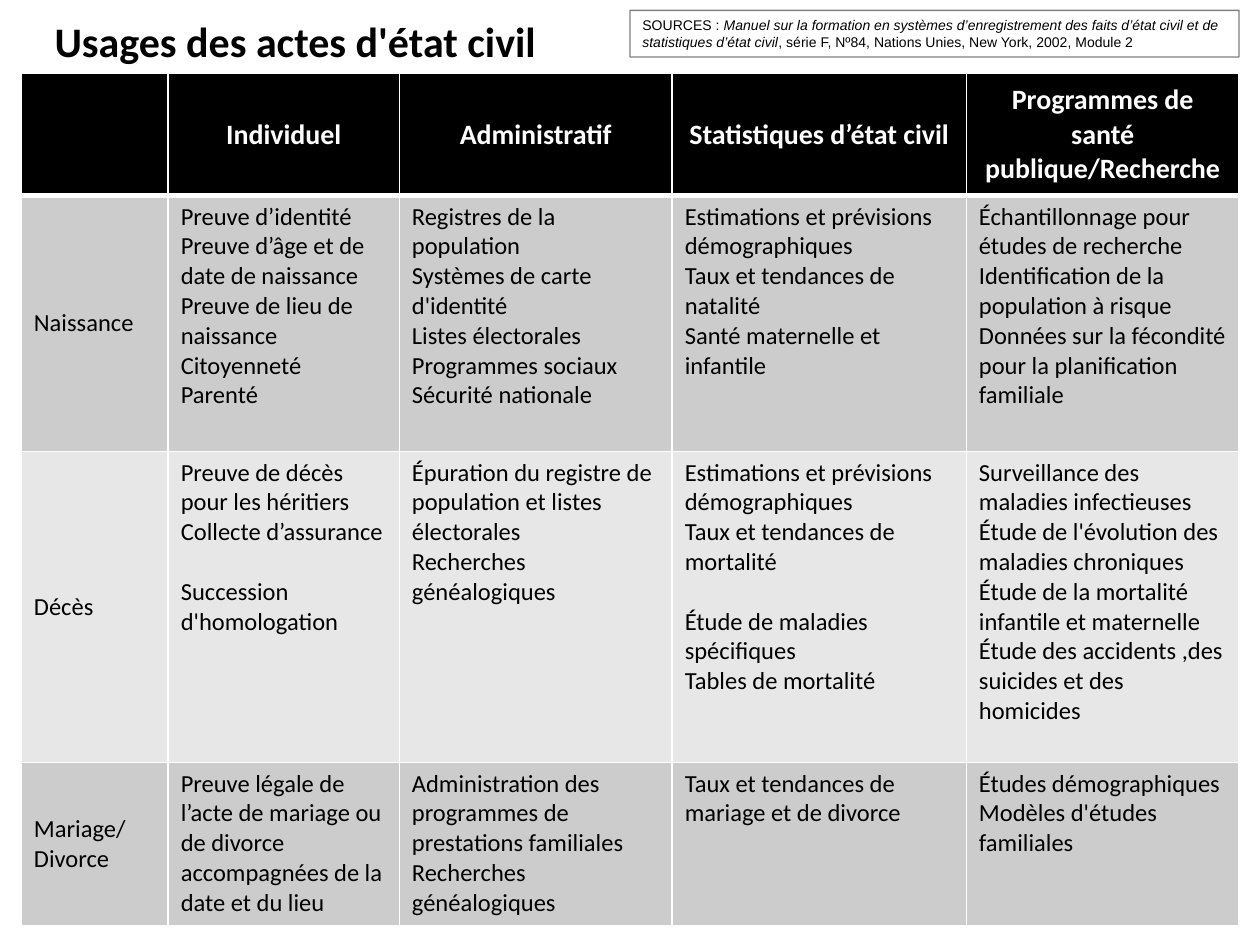
from lxml.etree import SubElement
from pptx import Presentation
from pptx.dml.color import RGBColor
from pptx.enum.shapes import MSO_SHAPE as Shape
from pptx.enum.text import MSO_ANCHOR as Anchor, MSO_AUTO_SIZE as AutoSize, PP_ALIGN as Align
from pptx.oxml.ns import qn
from pptx.util import Cm, Pt

COLORS = {"black": "000000", "white": "FFFFFF", "dark_band": "CCCCCC", "light_band": "E7E7E7"}

TITLE = "Usages des actes d'état civil"
SOURCES = [  # text, italic
    ("SOURCES\u00a0: ", False),
    ("Manuel sur la formation en systèmes d’enregistrement des faits d’état civil "
     "et de statistiques d’état civil", True),
    (", série F, Nº84, Nations Unies, New York, 2002, Module 2", False),
]
HEADERS = ["", "Individuel", "Administratif", "Statistiques d’état civil",
           "Programmes de santé publique/Recherche"]
EVENTS = [
    ("Naissance", [
        ["Preuve d’identité", "Preuve d’âge et de date de naissance",
         "Preuve de lieu de naissance", "Citoyenneté", "Parenté"],
        ["Registres de la population", "Systèmes de carte d'identité",
         "Listes électorales", "Programmes sociaux", "Sécurité nationale"],
        ["Estimations et prévisions démographiques", "Taux et tendances de natalité",
         "Santé maternelle et infantile"],
        ["Échantillonnage pour études de recherche",
         "Identification de la population à risque",
         "Données sur la fécondité pour la planification familiale"],
    ]),
    ("Décès", [
        ["Preuve de décès pour les héritiers", "Collecte d’assurance",
         "Succession d'homologation"],
        ["Épuration du registre de population et listes électorales",
         "Recherches généalogiques"],
        ["Estimations et prévisions démographiques", "Taux et tendances de mortalité",
         "Étude de maladies spécifiques", "Tables de mortalité"],
        ["Surveillance des maladies infectieuses",
         "Étude de l'évolution des maladies chroniques",
         "Étude de la mortalité infantile et maternelle",
         "Étude des accidents ,des suicides et des homicides"],
    ]),
    ("Mariage/Divorce", [
        ["Preuve légale de l’acte de mariage ou de divorce accompagnées de la date et du lieu"],
        ["Administration des programmes de prestations familiales",
         "Recherches généalogiques"],
        ["Taux et tendances de mariage et de divorce"],
        ["Études démographiques", "Modèles d'études familiales"],
    ]),
]
SPACED = {"Succession d'homologation", "Étude de maladies spécifiques"}  # one line of space before
COLUMN_WIDTHS = [2.96, 4.66, 5.5, 5.93, 5.5]
ROW_HEIGHTS = [2.46, 5.16, 6.27, 3.3]


def color(name):
    return RGBColor.from_string(COLORS[name])


def add_run(paragraph, text, size, font="Calibri", ink="black", bold=False, italic=False):
    run = paragraph.add_run()
    run.text = text
    run.font.name, run.font.size = font, Pt(size)
    run.font.bold, run.font.italic = bold, italic
    run.font.color.rgb = color(ink)


def set_borders(cell, top, bottom):
    properties = cell._tc.get_or_add_tcPr()
    for tag, width in (("a:lnL", 1), ("a:lnR", 1), ("a:lnT", top), ("a:lnB", bottom)):
        line = SubElement(properties, qn(tag), w=str(Pt(width)))
        fill = SubElement(line, qn("a:solidFill"))
        SubElement(fill, qn("a:srgbClr"), val=COLORS["white"])


def fill_cell(cell, lines, band, anchor, size=14, ink="black", bold=False, align=Align.LEFT):
    cell.fill.solid()
    cell.fill.fore_color.rgb = color(band)
    cell.vertical_anchor = anchor
    frame = cell.text_frame
    for index, text in enumerate(lines):
        paragraph = frame.add_paragraph() if index else frame.paragraphs[0]
        paragraph.alignment = align
        if text in SPACED:
            paragraph.space_before = Pt(17)
        if text:
            add_run(paragraph, text, size, ink=ink, bold=bold)


presentation = Presentation()
presentation.slide_width, presentation.slide_height = Cm(25.4), Cm(19.05)
slide = presentation.slides.add_slide(presentation.slide_layouts[6])

# Title
title = slide.shapes.add_textbox(Cm(0.85), Cm(0.3), Cm(11.6), Cm(1.06))
title.text_frame.word_wrap = True
title.text_frame.vertical_anchor = Anchor.MIDDLE
add_run(title.text_frame.paragraphs[0], TITLE, 24, bold=True)

# Table of uses
table = slide.shapes.add_table(
    len(ROW_HEIGHTS), len(COLUMN_WIDTHS), Cm(0.43), Cm(1.48),
    Cm(sum(COLUMN_WIDTHS)), Cm(sum(ROW_HEIGHTS))).table
for column, width in zip(table.columns, COLUMN_WIDTHS):
    column.width = Cm(width)
for index, (row, height) in enumerate(zip(table.rows, ROW_HEIGHTS)):
    row.height = Cm(height)
    for cell in row.cells:
        set_borders(cell, top=3 if index == 1 else 1, bottom=3 if index == 0 else 1)

for index, header in enumerate(HEADERS):
    fill_cell(table.cell(0, index), [header], "black", Anchor.MIDDLE,
              size=16, ink="white", bold=True, align=Align.CENTER)
for row, (event, uses) in enumerate(EVENTS, start=1):
    band = "dark_band" if row % 2 else "light_band"
    fill_cell(table.cell(row, 0), [event], band, Anchor.MIDDLE)
    for column, lines in enumerate(uses, start=1):
        fill_cell(table.cell(row, column), lines, band, Anchor.TOP)

# Sources box with a half-transparent outline
sources = slide.shapes.add_shape(Shape.RECTANGLE, Cm(12.7), Cm(0.21), Cm(12.28), Cm(0.94))
sources.shadow.inherit = False
sources.fill.background()
sources.line.width = Pt(0.75)
sources.line.color.rgb = color("black")
outline_color = sources.line._get_or_add_ln().find(".//" + qn("a:srgbClr"))
SubElement(outline_color, qn("a:alpha"), val="50000")
frame = sources.text_frame
frame.word_wrap = True
frame.auto_size = AutoSize.SHAPE_TO_FIT_TEXT
frame.vertical_anchor = Anchor.TOP
frame.paragraphs[0].alignment = Align.LEFT
for text, italic in SOURCES:
    add_run(frame.paragraphs[0], text, 8, font="Arial", italic=italic)

presentation.save("out.pptx")
